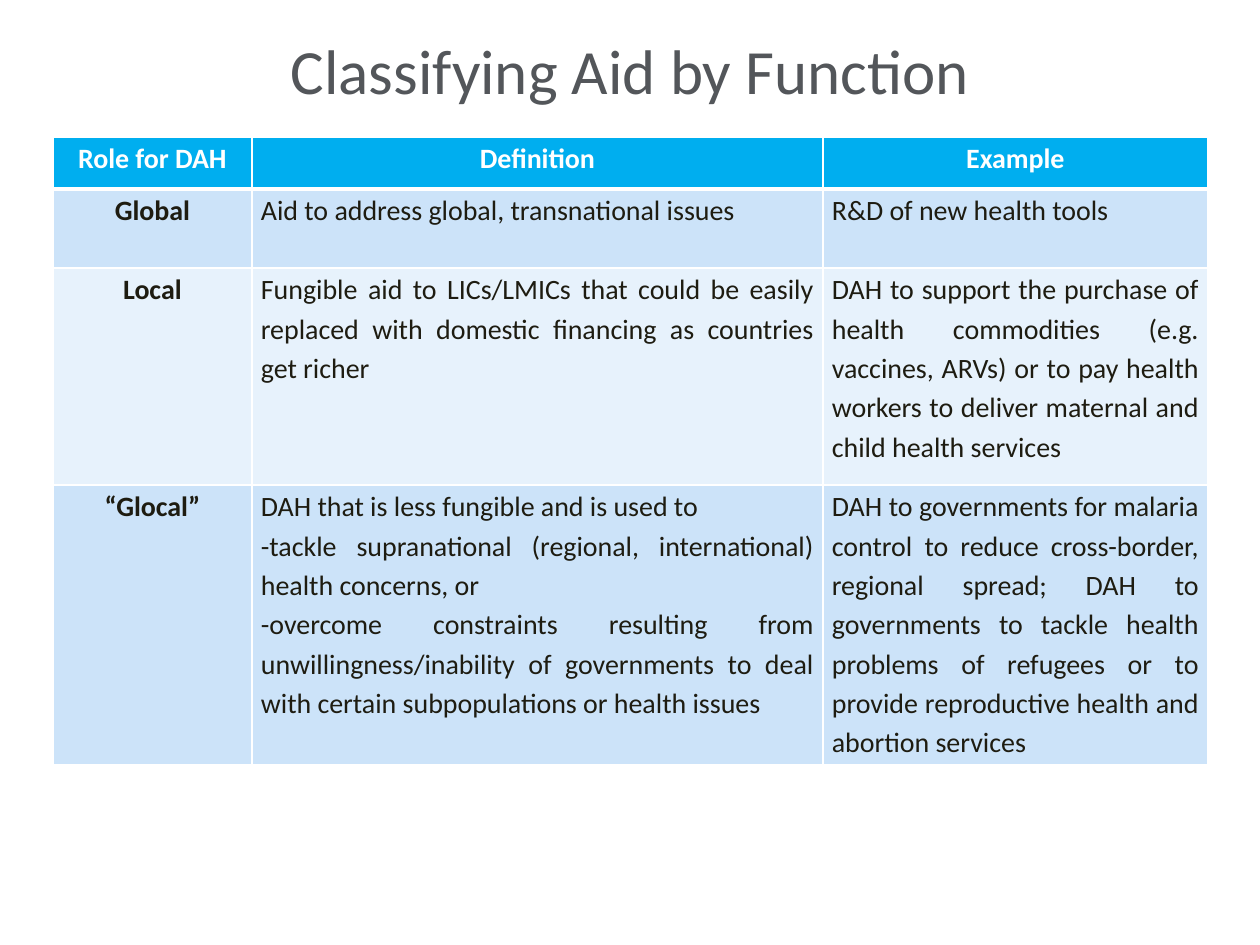
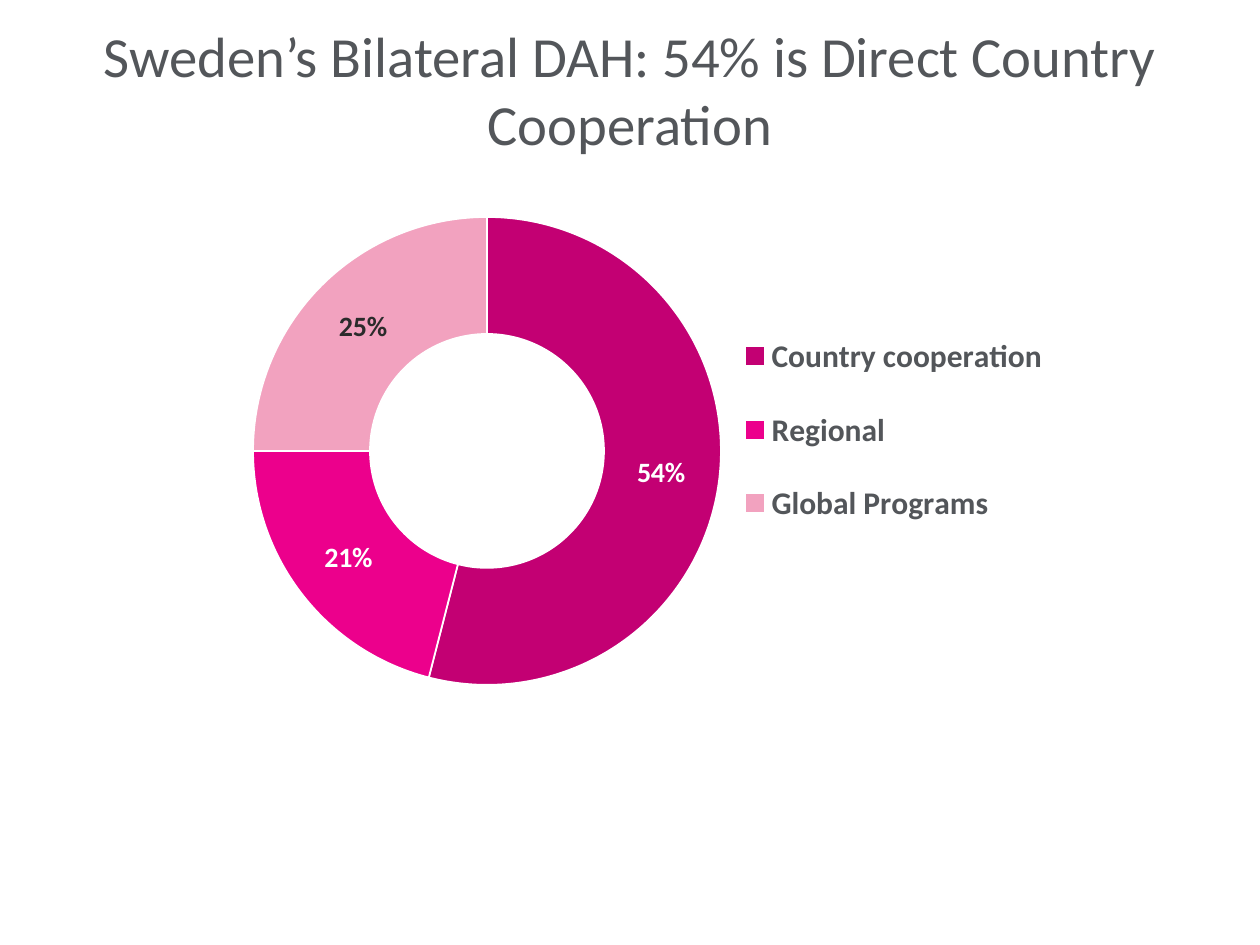
"""Builds two slides on health aid: a table of aid roles and a doughnut of Swedish aid."""
from lxml import etree
from pptx import Presentation
from pptx import util as u
from pptx.chart import data
from pptx.dml.color import RGBColor
from pptx.enum import chart as ch
from pptx.enum import text
from pptx.oxml import ns

HUES = {
    "white": "FFFFFF", "grey": "53565A", "ink": "1E1C11", "head": "00AEEF",
    "band": "CCE3F9", "pale": "E7F2FC",
    "plum": "C30073", "pink": "EC008C", "rose": "F2A2BF", "dark": "2B2B2B",
}
FONT = "Calibri"
ALIGN = text.PP_ALIGN

ROLES = {
    "title": "Classifying Aid by Function",
    "size": 36,
    "top": -10,
    "rows": [
        ["Role for DAH", "Definition", "Example"],
        ["Global", "Aid to address global, transnational issues",
         "R&D of new health tools"],
        ["Local",
         "Fungible aid to LICs/LMICs that could be easily replaced with "
         "domestic financing as countries get richer",
         "DAH to support the purchase of health commodities (e.g. vaccines, "
         "ARVs) or to pay health workers to deliver maternal and child "
         "health services"],
        ["“Glocal”",
         "DAH that is less fungible and is used to\n"
         "-tackle supranational (regional, international) health concerns, or\n"
         "-overcome constraints resulting from unwillingness/inability of "
         "governments to deal with certain subpopulations or health issues",
         "DAH to governments for malaria control to reduce cross-border, "
         "regional spread; DAH to governments to tackle health problems of "
         "refugees or to provide reproductive health and abortion services"],
    ],
    "wide": [199, 571, 385],
    "high": [52, 79, 217, 280],
    "at": (53, 137),
}
SWEDEN = {
    "title": "Sweden’s Bilateral DAH: 54% is Direct Country Cooperation",
    "size": 32.4,
    "top": 10,
    "parts": [
        ("Country cooperation", 54, "plum", "white"),
        ("Regional", 21, "pink", "white"),
        ("Global Programs", 25, "rose", "dark"),
    ],
    "at": (231, 199, 840, 504),
    "ring": (22, 18, 468, 468),
    "key": (507, 103, 312, 256),
}


def px(n):
    return u.Emu(round(n * u.Inches(1) / 126))


def hue(name):
    return RGBColor.from_string(HUES[name])


def style(font, size, color, bold=False):
    font.name, font.size, font.bold = FONT, u.Pt(size), bold
    font.color.rgb = hue(color)


def add_slide(deck, info):
    slide = deck.slides.add_slide(deck.slide_layouts[5])
    title = slide.shapes.title
    title.left, title.top, title.width, title.height = map(
        px, (63, info["top"], 1134, 158))
    frame = title.text_frame
    frame.text = info["title"]
    frame.word_wrap = True
    frame.vertical_anchor = text.MSO_ANCHOR.MIDDLE
    line = frame.paragraphs[0]
    line.alignment = ALIGN.CENTER
    style(line.font, info["size"], "grey")
    return slide


def edge(cell, side, width):
    line = etree.SubElement(cell._tc.get_or_add_tcPr(), ns.qn("a:ln" + side),
                            w=str(u.Pt(width)))
    fill = etree.SubElement(line, ns.qn("a:solidFill"))
    etree.SubElement(fill, ns.qn("a:srgbClr"), val=HUES["white"])


def fill_cell(cell, words, row, col):
    head = row == 0
    for side in "LRTB":
        thick = (head and side == "B") or (row == 1 and side == "T")
        edge(cell, side, 3 if thick else 1)
    cell.fill.solid()
    cell.fill.fore_color.rgb = hue("head" if head else ("pale", "band")[row % 2])
    cell.margin_left = cell.margin_right = px(9)
    cell.margin_top = cell.margin_bottom = 0
    cell.text = words
    for line in cell.text_frame.paragraphs:
        line.alignment = ALIGN.CENTER if head or col == 0 else ALIGN.JUSTIFY
        line.line_spacing = 1.15
        style(line.font, 16, "white" if head else "ink", head or col == 0)


def add_roles(slide, info):
    rows, wide, high = info["rows"], info["wide"], info["high"]
    box = map(px, (*info["at"], sum(wide), sum(high)))
    table = slide.shapes.add_table(len(rows), len(wide), *box).table
    for col, width in zip(table.columns, wide):
        col.width = px(width)
    for row, height in zip(table.rows, high):
        row.height = px(height)
    for r, row in enumerate(rows):
        for c, words in enumerate(row):
            fill_cell(table.cell(r, c), words, r, c)


def place(node, box, whole, inner=False):
    """Gives a chart part a fixed place inside the chart."""
    lay = node.find(ns.qn("c:layout"))
    if lay is None:
        lay = etree.Element(ns.qn("c:layout"))
        pos = node.find(ns.qn("c:legendPos"))
        if pos is None:
            node.insert(0, lay)
        else:
            pos.addnext(lay)
    for old in list(lay):
        lay.remove(old)
    man = etree.SubElement(lay, ns.qn("c:manualLayout"))
    marks = [("layoutTarget", "inner")] if inner else []
    marks += [("xMode", "edge"), ("yMode", "edge")]
    marks += [(tag, f"{n / whole[i % 2]:.4f}")
              for i, (tag, n) in enumerate(zip("xywh", box))]
    for tag, val in marks:
        etree.SubElement(man, ns.qn("c:" + tag), val=val)


def add_ring(slide, info):
    parts = info["parts"]
    stats = data.CategoryChartData()
    stats.categories = [part[0] for part in parts]
    stats.add_series("Series 1", [part[1] for part in parts])
    chart = slide.shapes.add_chart(
        ch.XL_CHART_TYPE.DOUGHNUT, *map(px, info["at"]), stats).chart
    style(chart.font, 10, "grey")
    chart.has_title = False
    chart.has_legend = True
    key = chart.legend
    key.position = ch.XL_LEGEND_POSITION.RIGHT
    key.include_in_layout = False
    style(key.font, 18, "grey", True)
    plot = chart.plots[0]
    plot.vary_by_categories = True
    for i, (_, _, color, ink) in enumerate(parts):
        point = plot.series[0].points[i]
        point.format.fill.solid()
        point.format.fill.fore_color.rgb = hue(color)
        point.format.line.color.rgb = hue("white")
        point.format.line.width = u.Pt(1)
        label = point.data_label
        style(label.font, 16, ink, True)
        for tag in ("showVal", "showPercent"):
            node = label._dLbl.find(ns.qn("c:" + tag))
            node.set("val", str(int(tag == "showPercent")))
    whole = info["at"][2:]
    area = chart._chartSpace.chart.plotArea
    place(area, info["ring"], whole, True)
    place(key._element, info["key"], whole)


def main():
    deck = Presentation()
    deck.slide_width, deck.slide_height = px(1260), px(945)
    add_roles(add_slide(deck, ROLES), ROLES)
    add_ring(add_slide(deck, SWEDEN), SWEDEN)
    deck.save("out.pptx")


if __name__ == "__main__":
    main()
